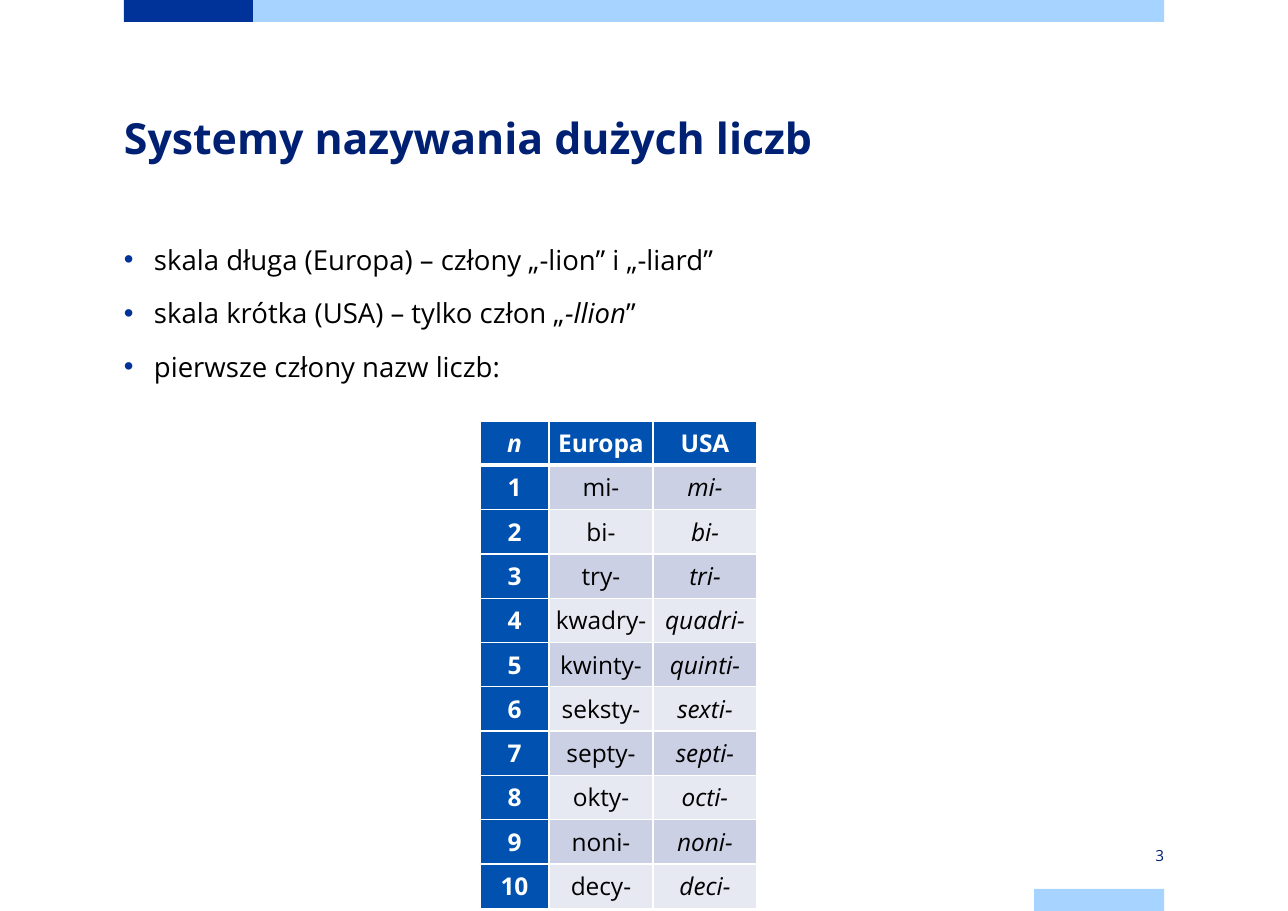
from lxml.etree import SubElement
from pptx import Presentation
from pptx.dml.color import RGBColor
from pptx.enum.shapes import MSO_SHAPE as SHAPE
from pptx.enum.text import MSO_ANCHOR as ANCHOR, MSO_AUTO_SIZE as AUTO, PP_ALIGN as ALIGN
from pptx.oxml.ns import qn
from pptx.util import Emu, Pt

PX = 8298  # EMU in one px
FONT = "Open Sans"
NAVY = RGBColor(0x00, 0x20, 0x73)
BLUE = RGBColor(0x00, 0x33, 0x99)
SKY = RGBColor(0xA6, 0xD3, 0xFF)
HEAD = RGBColor(0x00, 0x51, 0xB0)
BAND_DARK = RGBColor(0xCC, 0xD0, 0xE4)
BAND_LIGHT = RGBColor(0xE7, 0xE9, 0xF2)
BLACK = RGBColor(0, 0, 0)
WHITE = RGBColor(255, 255, 255)

BARS = [(124, 0, 130, 22, BLUE), (253, 0, 911, 22, SKY), (1034, 889, 130, 22, SKY)]
BULLETS = [
    [("skala długa (Europa) – człony „-lion” i „-liard”", False)],
    [("skala krótka (USA) – tylko człon „", False), ("-llion", True), ("”", False)],
    [("pierwsze człony nazw liczb:", False)],
]
EUROPE = ["mi-", "bi-", "try-", "kwadry-", "kwinty-", "seksty-", "septy-", "okty-", "noni-", "decy-"]
USA = ["mi-", "bi-", "tri-", "quadri-", "quinti-", "sexti-", "septi-", "octi-", "noni-", "deci-"]


def px(n):
    return Emu(n * PX)


def set_all(obj, values):
    for name, value in values.items():
        setattr(obj, name, value)


class SlideBuilder:
    """Draws elements on one title-only slide in a common style."""

    def __init__(self, prs):
        self.s = prs.slides.add_slide(prs.slide_layouts[5])

    def run(self, p, text, size, color, bold=False, italic=False):
        r = p.add_run()
        r.text = text
        set_all(r.font, dict(name=FONT, size=Pt(size), bold=bold, italic=italic))
        r.font.color.rgb = color

    def frame(self, sp, anchor=ANCHOR.TOP, pad=0):
        tf = sp.text_frame
        set_all(tf, dict(word_wrap=True, auto_size=AUTO.NONE, vertical_anchor=anchor,
                         margin_left=0, margin_right=0, margin_top=px(pad), margin_bottom=px(pad)))
        return tf

    def bar(self, x, y, w, h, color):
        sp = self.s.shapes.add_shape(SHAPE.RECTANGLE, px(x), px(y), px(w), px(h))
        sp.shadow.inherit = False
        sp.fill.solid()
        sp.fill.fore_color.rgb = color
        sp.line.fill.background()

    def title(self, text, x, y, w, h):
        sp = self.s.shapes.title
        set_all(sp, dict(left=px(x), top=px(y), width=px(w), height=px(h)))
        p = self.frame(sp).paragraphs[0]
        set_all(p, dict(alignment=ALIGN.LEFT, line_spacing=Pt(36)))
        self.run(p, text, 28, NAVY, bold=True)

    def bullets(self, items, x, y, w, h):
        tf = self.frame(self.s.shapes.add_textbox(px(x), px(y), px(w), px(h)))
        for i, item in enumerate(items):
            p = tf.add_paragraph() if i else tf.paragraphs[0]
            set_all(p, dict(line_spacing=Pt(24), space_before=Pt(11 if i else 0)))
            pPr = p._p.get_or_add_pPr()
            pPr.set("marL", str(px(30)))
            pPr.set("indent", str(-px(30)))
            color = SubElement(pPr, qn("a:buClr"))
            SubElement(color, qn("a:srgbClr"), val=str(BLUE))
            SubElement(pPr, qn("a:buFont"), typeface="Arial")
            SubElement(pPr, qn("a:buChar"), char="•")
            for text, italic in item:
                self.run(p, text, 18, BLACK, italic=italic)

    def page_number(self, text, x, y, w, h):
        tf = self.frame(self.s.shapes.add_textbox(px(x), px(y), px(w), px(h)), ANCHOR.MIDDLE, 9)
        p = tf.paragraphs[0]
        set_all(p, dict(alignment=ALIGN.RIGHT, line_spacing=0.9, space_after=Pt(6)))
        self.run(p, text, 10, NAVY)

    def borders(self, cell, row):
        widths = dict(L=1, R=1, T=3 if row == 1 else 1, B=3 if row == 0 else 1)
        for side, width in widths.items():
            ln = SubElement(cell._tc.get_or_add_tcPr(), qn(f"a:ln{side}"), w=str(Pt(width)))
            fill = SubElement(ln, qn("a:solidFill"))
            SubElement(fill, qn("a:srgbClr"), val=str(WHITE))

    def cell(self, cell, text, row, col):
        heading = row == 0 or col == 0
        margins = ("margin_left", "margin_right", "margin_top", "margin_bottom")
        set_all(cell, dict.fromkeys(margins, Pt(3.6)))
        cell.vertical_anchor = ANCHOR.MIDDLE
        self.borders(cell, row)
        cell.fill.solid()
        band = BAND_DARK if row % 2 else BAND_LIGHT
        cell.fill.fore_color.rgb = HEAD if heading else band
        p = cell.text_frame.paragraphs[0]
        p.alignment = ALIGN.CENTER
        italic = col == 0 if row == 0 else col == 2
        self.run(p, text, 16, WHITE if heading else BLACK, bold=heading, italic=italic)

    def table(self, rows, x, y, widths, row_h):
        shape = self.s.shapes.add_table(len(rows), len(widths), px(x), px(y),
                                        px(sum(widths)), px(row_h * len(rows)))
        table = shape.table
        for column, width in zip(table.columns, widths):
            column.width = px(width)
        for i, row in enumerate(rows):
            for j, text in enumerate(row):
                self.cell(table.cell(i, j), text, i, j)


def main():
    prs = Presentation()
    set_all(prs, dict(slide_width=px(1288), slide_height=px(911)))
    slide = SlideBuilder(prs)
    for bar in BARS:
        slide.bar(*bar)
    slide.title("Systemy nazywania dużych liczb", 124, 108, 1041, 130)
    slide.bullets(BULLETS, 124, 239, 867, 564)
    slide.page_number("3", 1034, 846, 130, 22)
    numbers = [str(n) for n in range(1, len(USA) + 1)]
    rows = [("n", "Europa", "USA"), *zip(numbers, EUROPE, USA)]
    slide.table(rows, 480, 421, [69, 104, 104], 44)
    prs.save("out.pptx")


if __name__ == "__main__":
    main()
